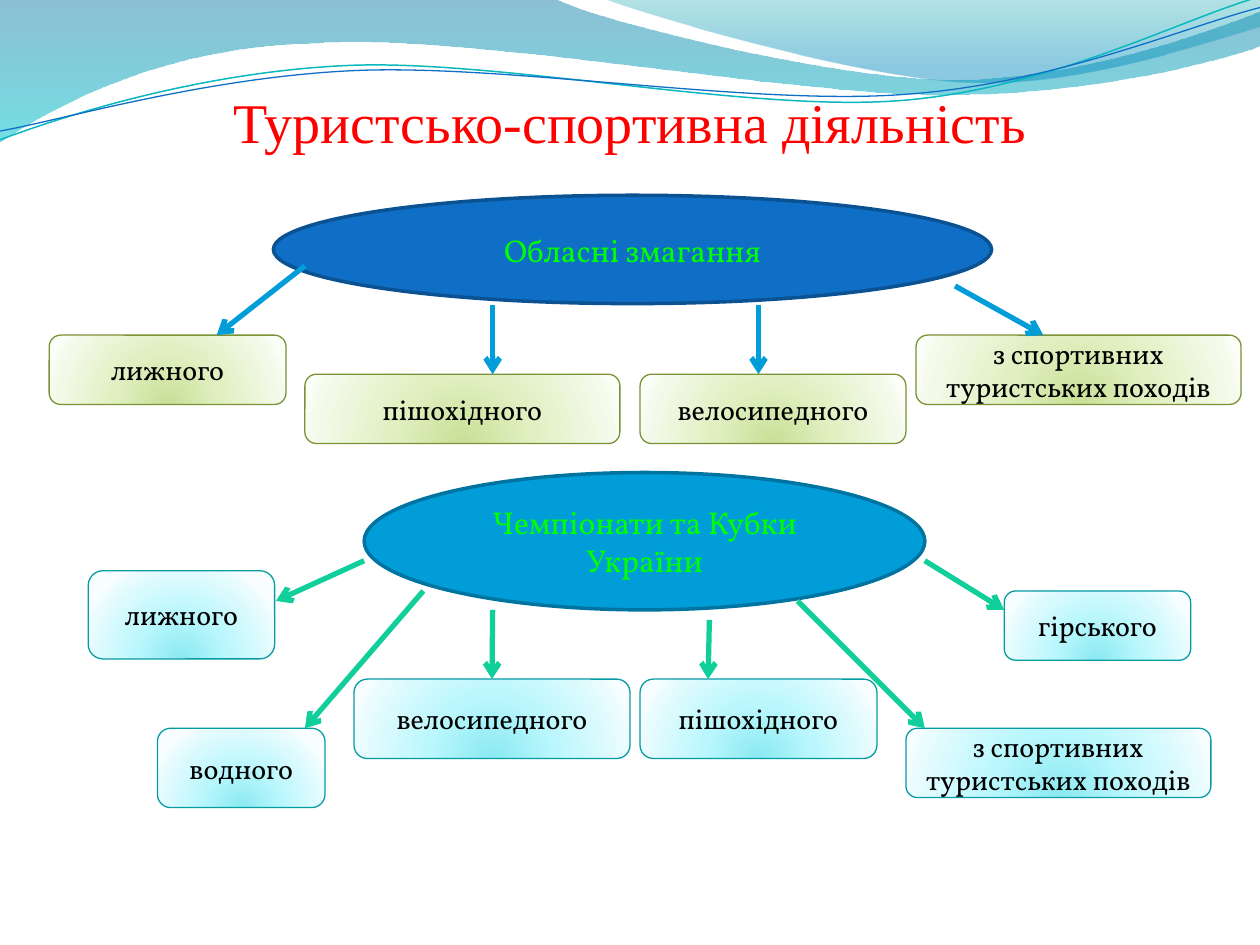
from lxml import etree
from pptx import Presentation
from pptx.dml.color import RGBColor
from pptx.enum.shapes import MSO_CONNECTOR, MSO_SHAPE
from pptx.enum.text import MSO_ANCHOR, PP_ALIGN
from pptx.oxml import parse_xml
from pptx.oxml.ns import nsdecls, qn
from pptx.util import Inches, Pt

ELLIPSE, ROUNDED = MSO_SHAPE.OVAL, MSO_SHAPE.ROUNDED_RECTANGLE
STRAIGHT = MSO_CONNECTOR.STRAIGHT
MIDDLE, BOTTOM = MSO_ANCHOR.MIDDLE, MSO_ANCHOR.BOTTOM
CENTER = PP_ALIGN.CENTER
TOP_SITE = 0

TITLE = "Туристсько-спортивна діяльність"
HIKES = "з спортивних туристських походів"

# Wave outlines: a start point, then (x, y) for a line
# or (x1, y1, x2, y2, x, y) for a Bézier curve.
# Gradient stops: position %, colour, opacity %.
FILLED_WAVES = [
    {"outline": [(0, 0), (4.4, -0.01), (4.76, 0.17, 6.64, 0.63, 7.58, 0.63),
                 (8.53, 0.63, 9.58, 0.26, 10, 0.09), (10.01, 0.36),
                 (9.83, 0.44, 8.7, 0.76, 7.46, 0.75),
                 (6.22, 0.75, 3.82, 0.28, 2.57, 0.34),
                 (1.29, 0.36, 0.46, 0.83, -0.01, 1.13)],
     "stops": [(0, "0074A1", 45), (100, "00C6CF", 55)]},
    {"outline": [(4.79, -0.01), (5.09, 0.11, 6.82, 0.62, 7.69, 0.65),
                 (8.56, 0.69, 9.61, 0.32, 10, 0.21), (10, 0)],
     "stops": [(0, "00A1A9", 30), (80, "008BBF", 45)]},
]
LINE_WAVES = [
    {"outline": [(0, 1.11), (0.48, 0.93, 1.58, 0.57, 2.77, 0.52),
                 (3.95, 0.47, 5.93, 0.89, 7.13, 0.8),
                 (8.33, 0.71, 9.38, 0.15, 9.98, -0.02)],
     "color": "0AB8BF", "width": 0.85},
    {"outline": [(0, 1.04), (0.47, 0.96, 1.64, 0.61, 2.83, 0.56),
                 (4.03, 0.51, 5.97, 0.84, 7.17, 0.75),
                 (8.36, 0.67, 9.41, 0.21, 10, 0.06)],
     "color": "0F6FC6", "width": 0.75},
]

# Branches: text, box (left, top, width, height), arrow start, arrow end.
# An arrow without an end is joined to the middle of the box top.
GROUPS = [
    {"hub": "Обласні змагання", "hub_box": (2.17, 1.55, 5.7, 0.86),
     "hub_fill": "0F6FC6", "hub_line": "0B5292",
     "arrow": "009DD9", "border": "7B9135",
     "stops": [(0, "C9DF97", 100), (43, "E0F0C1", 100),
               (93, "F5FAEC", 100), (100, "FCFEF8", 100)],
     "branches": [
         ("лижного", (0.39, 2.66, 1.88, 0.55), (2.42, 2.11), (1.72, 2.66)),
         ("пішохідного", (2.42, 2.97, 2.5, 0.55), (3.91, 2.42), (3.91, 2.97)),
         ("велосипедного", (5.08, 2.97, 2.11, 0.55), (6.02, 2.42), (6.02, 2.97)),
         (HIKES, (7.27, 2.66, 2.58, 0.55), (7.58, 2.27), (8.28, 2.66)),
     ]},
    {"hub": "Чемпіонати та Кубки України", "hub_box": (2.89, 3.75, 4.45, 1.09),
     "hub_fill": "009DD9", "hub_line": "0074A1",
     "arrow": "10CF9B", "border": "069CA3",
     "stops": [(0, "8BE9F1", 100), (43, "B9F7FD", 100),
               (93, "EAFCFE", 100), (100, "F8FEFF", 100)],
     "branches": [
         ("лижного", (0.7, 4.53, 1.48, 0.7), (2.89, 4.45), (2.19, 4.77)),
         ("водного", (1.25, 5.78, 1.33, 0.63), (3.36, 4.69), (2.42, 5.78)),
         ("велосипедного", (2.81, 5.39, 2.19, 0.63), (3.91, 4.84), None),
         ("пішохідного", (5.08, 5.39, 1.88, 0.63), (5.63, 4.92), (5.62, 5.39)),
         (HIKES, (7.19, 5.78, 2.42, 0.55), (6.33, 4.77), (7.34, 5.78)),
         ("гірського", (7.97, 4.69, 1.48, 0.55), (7.34, 4.45), (7.97, 4.84)),
     ]},
]

LINEAR = '<a:lin ang="5400000" scaled="0"/>'
GLOW_FROM_BELOW = ('<a:path path="circle"><a:fillToRect l="50000" t="130000" '
                   'r="50000" b="-30000"/></a:path>')


def rgb(color):
    return RGBColor.from_string(color)


def set_line(part, color, width):
    part.line.color.rgb = rgb(color)
    part.line.width = Pt(width)


def set_gradient(shape, stops, direction):
    stop_xml = "".join(
        f'<a:gs pos="{pos * 1000}"><a:srgbClr val="{color}">'
        f'<a:alpha val="{opacity * 1000}"/></a:srgbClr></a:gs>'
        for pos, color, opacity in stops)
    gradient = parse_xml(f'<a:gradFill {nsdecls("a")} rotWithShape="1">'
                         f'<a:gsLst>{stop_xml}</a:gsLst>{direction}</a:gradFill>')
    shape.fill.background()
    properties = shape.element.spPr
    properties.replace(properties.find(qn("a:noFill")), gradient)


def set_text(shape, text, anchor=MIDDLE, **font_format):
    frame = shape.text_frame
    frame.word_wrap = True
    frame.vertical_anchor = anchor
    paragraph = frame.paragraphs[0]
    paragraph.alignment = CENTER
    run = paragraph.add_run()
    run.text = text
    run.font.color.rgb = rgb(font_format.pop("color"))
    for attribute, value in font_format.items():
        setattr(run.font, attribute, value)


def add_wave(slide, outline, closed):
    """Build the outline from its end points, then bend the curved segments."""
    ends = [(Inches(segment[-2]), Inches(segment[-1])) for segment in outline]
    builder = slide.shapes.build_freeform(*ends[0])
    builder.add_line_segments(ends[1:], close=closed)
    wave = builder.convert_to_shape()
    wave.shadow.inherit = False
    sides = list(wave.element.spPr.iter(qn("a:lnTo")))
    for side, segment in zip(sides, outline[1:]):
        if len(segment) == 2:
            continue
        curve = etree.Element(qn("a:cubicBezTo"))
        for x, y in zip(segment[::2], segment[1::2]):
            etree.SubElement(curve, qn("a:pt"), x=str(Inches(x) - wave.left),
                             y=str(Inches(y) - wave.top))
        side.getparent().replace(side, curve)
    return wave


def add_node(slide, kind, box, text, border, border_width, **font_format):
    node = slide.shapes.add_shape(kind, *map(Inches, box))
    node.shadow.inherit = False
    set_line(node, border, border_width)
    set_text(node, text, name="Vollkorn", **font_format)
    return node


def add_arrow(slide, start, end, target, color):
    arrow = slide.shapes.add_connector(STRAIGHT, *map(Inches, start + (end or start)))
    if end is None:
        arrow.end_connect(target, TOP_SITE)
    set_line(arrow, color, 3)
    properties = arrow.element.spPr
    etree.SubElement(properties.find(qn("a:ln")), qn("a:tailEnd"), type="arrow")
    etree.SubElement(properties, qn("a:effectLst"))


def main():
    deck = Presentation()
    deck.slide_width, deck.slide_height = Inches(10), Inches(7.5)
    slide = deck.slides.add_slide(deck.slide_layouts[6])

    for wave in FILLED_WAVES:
        band = add_wave(slide, wave["outline"], True)
        set_gradient(band, wave["stops"], LINEAR)
        band.line.fill.background()
    for wave in LINE_WAVES:
        strand = add_wave(slide, wave["outline"], False)
        strand.fill.background()
        set_line(strand, wave["color"], wave["width"])

    title = slide.shapes.add_textbox(*map(Inches, (0.5, 0.6, 9, 0.63)))
    frame = title.text_frame
    frame.margin_left = frame.margin_right = frame.margin_bottom = 0
    set_text(title, TITLE, BOTTOM, name="Times New Roman", size=Pt(32), color="FF0000")

    for group in GROUPS:
        hub = add_node(slide, ELLIPSE, group["hub_box"], group["hub"],
                       group["hub_line"], 2, size=Pt(18), color="00FF00")
        hub.fill.solid()
        hub.fill.fore_color.rgb = rgb(group["hub_fill"])
        for text, box, start, end in group["branches"]:
            branch = add_node(slide, ROUNDED, box, text, group["border"], 0.75,
                              size=Pt(16), color="000000")
            set_gradient(branch, group["stops"], GLOW_FROM_BELOW)
            add_arrow(slide, start, end, branch, group["arrow"])

    deck.save("out.pptx")


if __name__ == "__main__":
    main()
